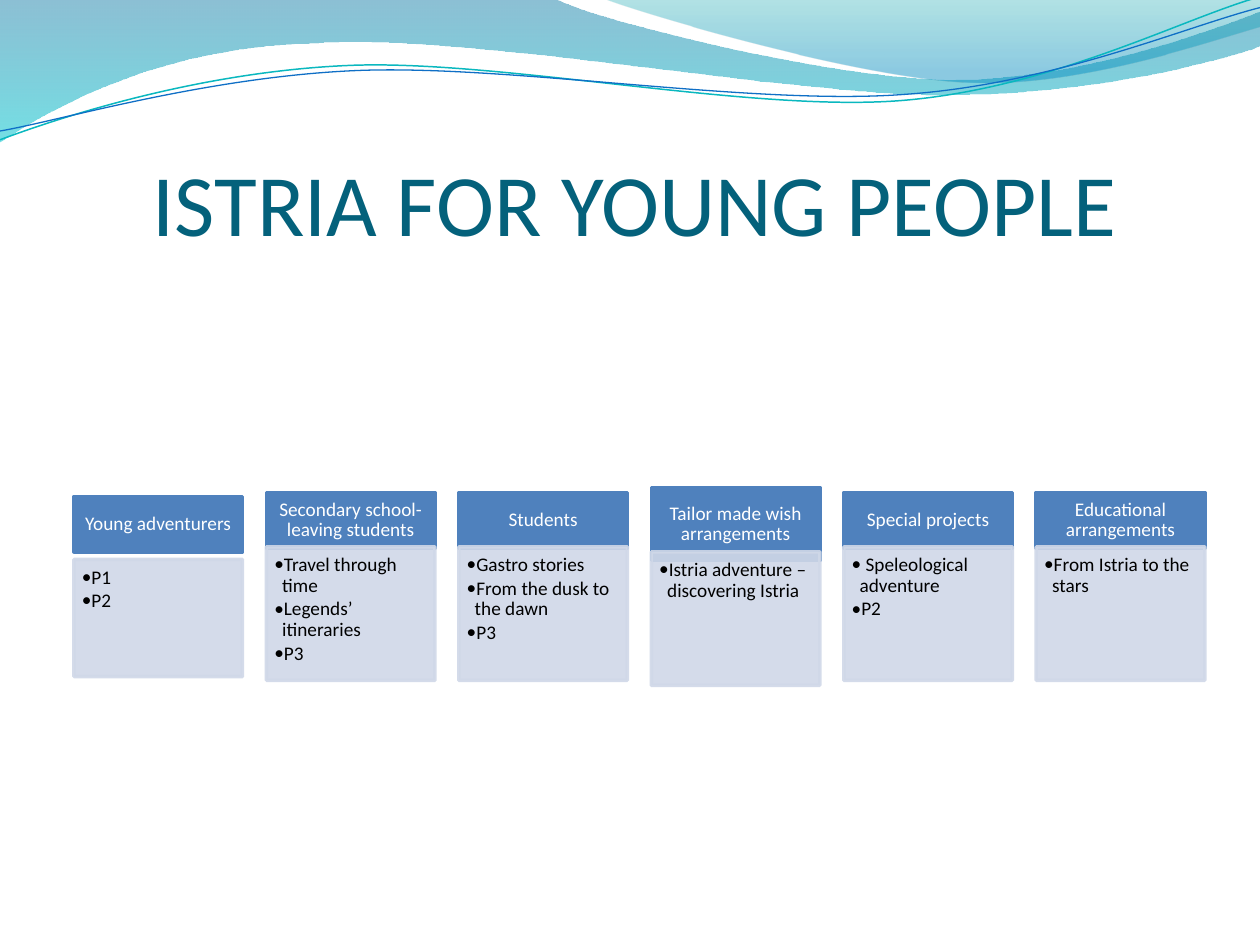
import math
from dataclasses import dataclass

from lxml import etree
from pptx import Presentation
from pptx import util as u
from pptx.dml.color import RGBColor
from pptx.enum import shapes, text
from pptx.oxml.ns import qn

COLORS = {
    "title": "04617B", "header": "4F81BD", "body": "D0D8E8",
    "white": "FFFFFF", "black": "000000",
    "teal line": "0AB8BF", "blue line": "0F6FC6",
    "deep blue": "0074A1", "cyan": "00C6CF", "green": "00A1A9", "sky": "008BBF",
}
FONT = "Calibri"
CARD_LEFT, CARD_STEP, CARD_WIDTH = u.Cm(1.49), u.Cm(3.88), u.Cm(3.4)


@dataclass
class Stop:
    position: int
    color: str
    opacity: int


@dataclass
class Wave:
    frame: tuple
    start: tuple
    segments: list
    stops: tuple = ()
    line: str = ""
    width: float = 0
    rotation: float = 0


@dataclass
class Card:
    heading: str
    items: list
    top: float = 3.91
    header_height: float = 0.44
    body_top: float = 4.34
    body_height: float = 1.06


WAVES = [
    Wave((-0.01, -0.01, 10.02, 1.14), (0, 0), [
        (4.4, -0.01), (4.76, 0.17, 6.64, 0.63, 7.58, 0.63),
        (8.53, 0.63, 9.58, 0.26, 10, 0.09), (10.01, 0.36),
        (9.83, 0.44, 8.7, 0.76, 7.46, 0.75), (6.22, 0.75, 3.82, 0.28, 2.57, 0.34),
        (1.29, 0.36, 0.46, 0.83, -0.01, 1.13), (0, 0)],
        stops=(Stop(0, "deep blue", 45), Stop(100, "cyan", 55))),
    Wave((4.79, -0.01, 5.21, 0.7), (4.79, -0.01), [
        (5.09, 0.11, 6.82, 0.62, 7.69, 0.65), (8.56, 0.69, 9.61, 0.32, 10, 0.21),
        (10, 0), (4.79, -0.01)],
        stops=(Stop(0, "green", 30), Stop(80, "sky", 45))),
    Wave((-0.02, 0.22, 10.02, 0.71), (0, 1.11), [
        (0.48, 0.93, 1.58, 0.57, 2.77, 0.52), (3.95, 0.47, 5.93, 0.89, 7.13, 0.8),
        (8.33, 0.71, 9.38, 0.15, 9.98, -0.02)],
        line="teal line", width=0.85, rotation=357.3),
    Wave((-0.02, 0.3, 10.03, 0.58), (0, 1.04), [
        (0.47, 0.96, 1.64, 0.61, 2.83, 0.56), (4.03, 0.51, 5.97, 0.84, 7.17, 0.75),
        (8.36, 0.67, 9.41, 0.21, 10, 0.06)],
        line="blue line", width=0.75, rotation=357.3),
]

CARDS = [
    Card("Young adventurers", ["P1", "P2"], top=3.94, body_top=4.44, body_height=0.93),
    Card("Secondary school-leaving students",
         ["Travel through time", "Legends’ itineraries", "P3"]),
    Card("Students", ["Gastro stories", "From the dusk to the dawn", "P3"]),
    Card("Tailor made wish arrangements", ["Istria adventure – discovering Istria"],
         top=3.87, header_height=0.58, body_top=4.38),
    Card("Special projects", [" Speleological adventure", "P2"]),
    Card("Educational arrangements", ["From Istria to the stars"]),
]


def inches(value: float) -> u.Length:
    return u.Cm(value * 2.54)


def rgb(name: str) -> RGBColor:
    return RGBColor.from_string(COLORS[name])


def set_opacity(color, percent: int) -> None:
    etree.SubElement(color, qn("a:alpha")).set("val", str(percent * 1000))


def set_gradient(shape, stops: tuple) -> None:
    gradient = etree.Element(qn("a:gradFill"), rotWithShape="1")
    stop_list = etree.SubElement(gradient, qn("a:gsLst"))
    for stop in stops:
        entry = etree.SubElement(stop_list, qn("a:gs"), pos=str(stop.position * 1000))
        set_opacity(etree.SubElement(entry, qn("a:srgbClr"), val=COLORS[stop.color]),
                    stop.opacity)
    etree.SubElement(gradient, qn("a:lin"), ang="5400000", scaled="0")
    shape._element.spPr.find(qn("a:custGeom")).addnext(gradient)


def local_point(wave: Wave, x: float, y: float) -> tuple:
    left, top, width, height = wave.frame
    angle = math.radians(-wave.rotation)
    dx, dy = x - left - width / 2, y - top - height / 2
    return (inches(dx * math.cos(angle) - dy * math.sin(angle) + width / 2),
            inches(dx * math.sin(angle) + dy * math.cos(angle) + height / 2))


def set_curves(shape, wave: Wave) -> None:
    outline = next(shape._element.spPr.iter(qn("a:path")))
    outline.set("w", str(shape.width))
    outline.set("h", str(shape.height))
    for child in list(outline):
        outline.remove(child)
    for index, values in enumerate([wave.start, *wave.segments]):
        tag = "a:moveTo" if index == 0 else "a:lnTo" if len(values) == 2 else "a:cubicBezTo"
        command = etree.SubElement(outline, qn(tag))
        for x, y in zip(values[::2], values[1::2]):
            px, py = local_point(wave, x, y)
            etree.SubElement(command, qn("a:pt"), x=str(px), y=str(py))
    if wave.stops:
        etree.SubElement(outline, qn("a:close"))


def draw_wave(page, wave: Wave) -> None:
    builder = page.shapes.build_freeform(*map(inches, wave.start))
    builder.add_line_segments([tuple(map(inches, s[-2:])) for s in wave.segments], close=False)
    shape = builder.convert_to_shape()
    shape.left, shape.top, shape.width, shape.height = map(inches, wave.frame)
    shape.rotation = wave.rotation
    set_curves(shape, wave)
    shape.shadow.inherit = False
    if wave.stops:
        set_gradient(shape, wave.stops)
        shape.line.fill.background()
    else:
        shape.fill.background()
        shape.line.color.rgb = rgb(wave.line)
        shape.line.width = u.Pt(wave.width)


def write(box, lines: list, *, size: float, color: str, margins: tuple,
          align=text.PP_ALIGN.LEFT, anchor=text.MSO_ANCHOR.TOP,
          spacing: float = 0.9, after: int = 0, bullet: bool = False) -> None:
    frame = box.text_frame
    frame.word_wrap = True
    frame.auto_size = text.MSO_AUTO_SIZE.NONE
    frame.vertical_anchor = anchor
    (frame.margin_left, frame.margin_top,
     frame.margin_right, frame.margin_bottom) = map(u.Cm, margins)
    for index, line in enumerate(lines):
        para = frame.paragraphs[0] if index == 0 else frame.add_paragraph()
        para.alignment = align
        para.line_spacing = spacing
        span = para.add_run()
        span.text = line
        span.font.name = FONT
        span.font.size = u.Pt(size)
        span.font.color.rgb = rgb(color)
        settings = para._p.get_or_add_pPr()
        if after:
            gap = etree.SubElement(settings, qn("a:spcAft"))
            etree.SubElement(gap, qn("a:spcPct"), val=str(after * 1000))
        if bullet:
            para.level = 1
            settings.set("marL", str(u.Cm(0.16)))
            settings.set("indent", str(-u.Cm(0.16)))
            etree.SubElement(settings, qn("a:buFont"), typeface=FONT)
            etree.SubElement(settings, qn("a:buChar"), char="••")


def add_panel(page, left: int, top: float, height: float, color: str, opacity: int = 100):
    area = (left, inches(top), CARD_WIDTH, inches(height))
    panel = page.shapes.add_shape(shapes.MSO_SHAPE.RECTANGLE, *area)
    panel.shadow.inherit = False
    panel.fill.solid()
    panel.fill.fore_color.rgb = rgb(color)
    panel.line.color.rgb = rgb(color)
    panel.line.width = u.Pt(2)
    if opacity < 100:
        for shade in list(panel._element.spPr.iter(qn("a:srgbClr"))):
            set_opacity(shade, opacity)
    return page.shapes.add_textbox(*area)


def draw_card(page, card: Card, left: int) -> None:
    header = add_panel(page, left, card.top, card.header_height, "header")
    write(header, [card.heading], size=11, color="white", margins=(0.22, 0.12, 0.22, 0.12),
          align=text.PP_ALIGN.CENTER, anchor=text.MSO_ANCHOR.MIDDLE, after=35)
    body = add_panel(page, left, card.body_top, card.body_height, "body", opacity=90)
    write(body, card.items, size=11, color="black", margins=(0.16, 0.16, 0.22, 0.24),
          after=15, bullet=True)


def main() -> None:
    deck = Presentation()
    deck.slide_width, deck.slide_height = inches(10), inches(7.5)
    page = deck.slides.add_slide(deck.slide_layouts[5])
    for wave in WAVES:
        draw_wave(page, wave)
    title = page.shapes.title
    title.left, title.top, title.width, title.height = map(inches, (0.5, 0.77, 9.08, 1.25))
    write(title, ["ISTRIA FOR YOUNG PEOPLE"], size=50, color="title", margins=(0, 0.13, 0, 0),
          align=text.PP_ALIGN.CENTER, anchor=text.MSO_ANCHOR.BOTTOM, spacing=1.0)
    page.shapes._spTree.append(title._element)
    for column, card in enumerate(CARDS):
        draw_card(page, card, CARD_LEFT + column * CARD_STEP)
    deck.save("out.pptx")


if __name__ == "__main__":
    main()
